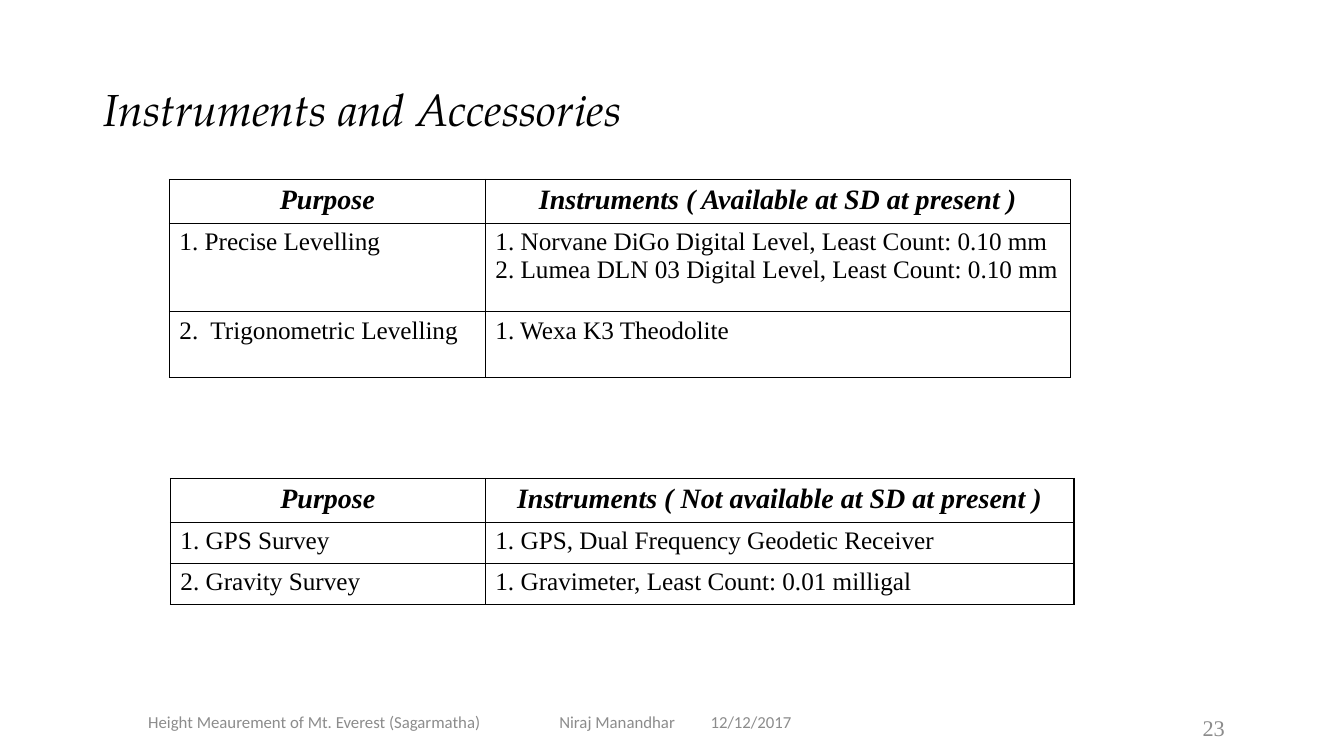
from lxml.etree import SubElement
from pptx import Presentation
from pptx.dml.color import RGBColor
from pptx.enum.text import MSO_ANCHOR, PP_ALIGN
from pptx.oxml.ns import qn
from pptx.util import Pt

BLACK, GREY = "000000", "8C8C8C"
SERIF = "Times New Roman"

AVAILABLE = [
    [["Purpose"], ["Instruments ( Available at SD at present )"]],
    [["1. Precise Levelling"],
     ["1. Norvane DiGo Digital Level, Least Count: 0.10 mm",
      "2. Lumea DLN 03 Digital Level, Least Count: 0.10 mm"]],
    [["2.  Trigonometric Levelling"], ["1. Wexa K3 Theodolite"]],
]
NOT_AVAILABLE = [
    [["Purpose"], ["Instruments ( Not available at SD at present )"]],
    [["1. GPS Survey"], ["1. GPS, Dual Frequency Geodetic Receiver"]],
    [["2. Gravity Survey"], ["1. Gravimeter, Least Count: 0.01 milligal"]],
]


def rgb(color):
    return RGBColor.from_string(color)


def add_run(p, text, font, size, color=BLACK, bold=False, italic=False):
    r = p.add_run()
    r.text = text
    r.font.name, r.font.size = font, Pt(size)
    r.font.bold, r.font.italic = bold, italic
    r.font.color.rgb = rgb(color)


def add_text(s, box, text, font, size, color, align=PP_ALIGN.LEFT, italic=False):
    tf = s.shapes.add_textbox(*map(Pt, box)).text_frame
    tf.word_wrap = True
    tf.vertical_anchor = MSO_ANCHOR.MIDDLE
    p = tf.paragraphs[0]
    p.alignment = align
    add_run(p, text, font, size, color, italic=italic)
    return p


def add_borders(cell):
    tcPr = cell._tc.get_or_add_tcPr()
    for i, side in enumerate(("lnL", "lnR", "lnT", "lnB")):
        ln = tcPr.makeelement(qn(f"a:{side}"), {"w": str(Pt(1))})
        fill = SubElement(ln, qn("a:solidFill"))
        SubElement(fill, qn("a:srgbClr"), val=BLACK)
        tcPr.insert(i, ln)


def add_instruments(s, left, top, col_widths, row_heights, rows):
    table = s.shapes.add_table(
        len(rows), len(col_widths), Pt(left), Pt(top),
        Pt(sum(col_widths)), Pt(sum(row_heights))).table
    table.first_row = table.horz_banding = False
    for col, width in zip(table.columns, col_widths):
        col.width = Pt(width)
    for i, (row, height) in enumerate(zip(rows, row_heights)):
        table.rows[i].height = Pt(height)
        header = i == 0
        for j, lines in enumerate(row):
            cell = table.cell(i, j)
            cell.fill.background()
            add_borders(cell)
            tf = cell.text_frame
            for k, line in enumerate(lines):
                p = tf.add_paragraph() if k else tf.paragraphs[0]
                p.alignment = PP_ALIGN.CENTER if header else PP_ALIGN.LEFT
                add_run(p, line, SERIF, 20 if header else 18,
                        bold=header, italic=header)


def add_footer(s, left, top, width, height):
    # Talk name, then author and date
    for x, text in ((0, "Height Meaurement of Mt. Everest (Sagarmatha)"),
                    (257.8, "Niraj Manandhar \t12/12/2017")):
        add_text(s, (left + x, top, 268, height), text, "Calibri", 12, GREY,
                 PP_ALIGN.CENTER)
    # Slide number
    add_text(s, (left + width - 61, top + 4.3, 61, height), "23", SERIF, 16,
             GREY, PP_ALIGN.RIGHT)


def main():
    prs = Presentation()
    prs.slide_width, prs.slide_height = Pt(960), Pt(540)
    s = prs.slides.add_slide(prs.slide_layouts[6])

    # Title
    p = add_text(s, (67, 49.7, 826, 60.5), "Instruments and Accessories",
                 "TeX Gyre Pagella", 32, BLACK, italic=True)
    p.line_spacing = 0.9

    # Tables
    add_instruments(s, 121, 128.2, (225.7, 417.8), (29.5, 63.2, 47.2), AVAILABLE)
    add_instruments(s, 121.7, 341.8, (225, 420.5), (29.3,) * 3, NOT_AVAILABLE)

    add_footer(s, 90.7, 501.1, 791.3, 28.8)
    prs.save("out.pptx")


if __name__ == "__main__":
    main()
